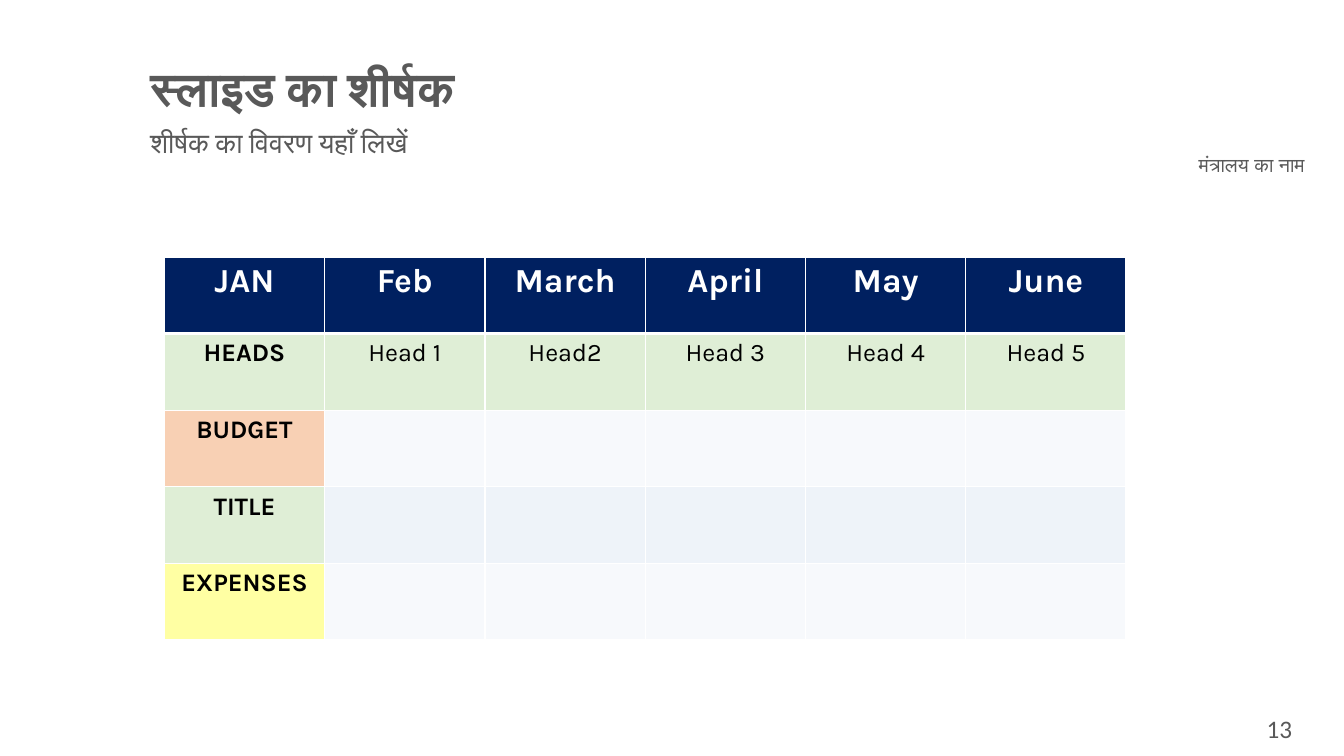
from lxml.etree import SubElement
from pptx import Presentation
from pptx.dml.color import RGBColor
from pptx.enum.text import MSO_ANCHOR as ANCHOR, PP_ALIGN as ALIGN
from pptx.oxml.ns import qn
from pptx.util import Inches, Pt

GREY, WHITE, BLACK, NAVY = "595959", "FFFFFF", "000000", "002060"
GREEN, ORANGE, YELLOW = "A9D18E", "ED7D31", "FFFF00"
BANDS = ("EAEFF7", "D2DEEF")
TINT = 36  # opacity of body cells, percent

MONTHS = ["JAN", "Feb", "March", "April", "May", "June"]
HEADS = ["HEADS", "Head 1", "Head2", "Head 3", "Head 4", "Head 5"]
ROW_LABELS = [("BUDGET", ORANGE), ("TITLE", GREEN), ("EXPENSES", YELLOW)]
COL_W, ROW_H = 1.59, 0.76


def rgb(color):
    return RGBColor.from_string(color)


def write(tf, text, size, color, font="Calibri", bold=False, align=ALIGN.LEFT,
          spacing=None):
    p = tf.paragraphs[0]
    for name, value in {"alignment": align, "line_spacing": spacing}.items():
        setattr(p, name, value)
    r = p.add_run()
    r.text = text
    for name, value in {"size": Pt(size), "name": font, "bold": bold}.items():
        setattr(r.font, name, value)
    r.font.color.rgb = rgb(color)
    # Devanagari uses the complex-script font
    SubElement(r.font._element, qn("a:cs"), typeface=font)


def place(sp, left, top, width, height, anchor=ANCHOR.TOP):
    box = {"left": left, "top": top, "width": width, "height": height}
    for name, value in box.items():
        setattr(sp, name, Inches(value))
    tf = sp.text_frame
    tf.word_wrap = True
    tf.vertical_anchor = anchor
    return tf


def add_text(s, box, text, size, anchor=ANCHOR.TOP, **fmt):
    sp = s.shapes.add_textbox(0, 0, 0, 0)
    write(place(sp, *box, anchor), text, size, GREY, **fmt)


def set_borders(cell, top=1, bottom=1):
    tcPr = cell._tc.get_or_add_tcPr()
    for side, width in {"L": 1, "R": 1, "T": top, "B": bottom}.items():
        ln = SubElement(tcPr, qn(f"a:ln{side}"), w=str(Pt(width)))
        fill = SubElement(ln, qn("a:solidFill"))
        SubElement(fill, qn("a:srgbClr"), val=WHITE)


def set_fill(cell, color, opacity=100):
    cell.fill.solid()
    cell.fill.fore_color.rgb = rgb(color)
    if opacity < 100:
        clr = cell._tc.tcPr.find(f"{qn('a:solidFill')}/{qn('a:srgbClr')}")
        SubElement(clr, qn("a:alpha"), val=str(opacity * 1000))


def add_budget_table(s, left, top):
    # Each row is a list of (text, fill) pairs
    rows = [[(m, NAVY) for m in MONTHS], [(h, GREEN) for h in HEADS]]
    for i, label in enumerate(ROW_LABELS):
        rows.append([label] + [("", BANDS[i % 2])] * (len(MONTHS) - 1))
    n_rows, n_cols = len(rows), len(MONTHS)
    table = s.shapes.add_table(n_rows, n_cols, Inches(left), Inches(top),
                               Inches(COL_W * n_cols), Inches(ROW_H * n_rows)).table
    table.horz_banding = False
    for i, row in enumerate(rows):
        header = i == 0
        for j, (text, color) in enumerate(row):
            cell = table.cell(i, j)
            set_borders(cell, top=3 if i == 1 else 1, bottom=3 if header else 1)
            set_fill(cell, color, 100 if header else TINT)
            if text:
                write(cell.text_frame, text, 24 if header else 18,
                      WHITE if header else BLACK, "Karla",
                      bold=header or j == 0, align=ALIGN.CENTER)


def main():
    prs = Presentation()
    prs.slide_width, prs.slide_height = Inches(13.33), Inches(7.5)
    s = prs.slides.add_slide(prs.slide_layouts[5])

    # Ministry name
    add_text(s, (11.79, 1.47, 1.57, 0.34), "मंत्रालय का नाम", 14, font="Arial")

    # Monthly budget table
    add_budget_table(s, 1.63, 2.55)

    # Title and its description
    write(place(s.shapes.title, 1.39, 0.6, 9.61, 0.55), "स्लाइड का शीर्षक",
          34, GREY, bold=True, spacing=0.9)
    add_text(s, (1.39, 1.23, 9.61, 0.63), "शीर्षक का विवरण यहाँ लिखें", 20, spacing=0.9)

    # Page number
    add_text(s, (12.1, 7, 1.18, 0.45), "13", 18, ANCHOR.MIDDLE, align=ALIGN.CENTER)

    prs.save("out.pptx")


if __name__ == "__main__":
    main()
